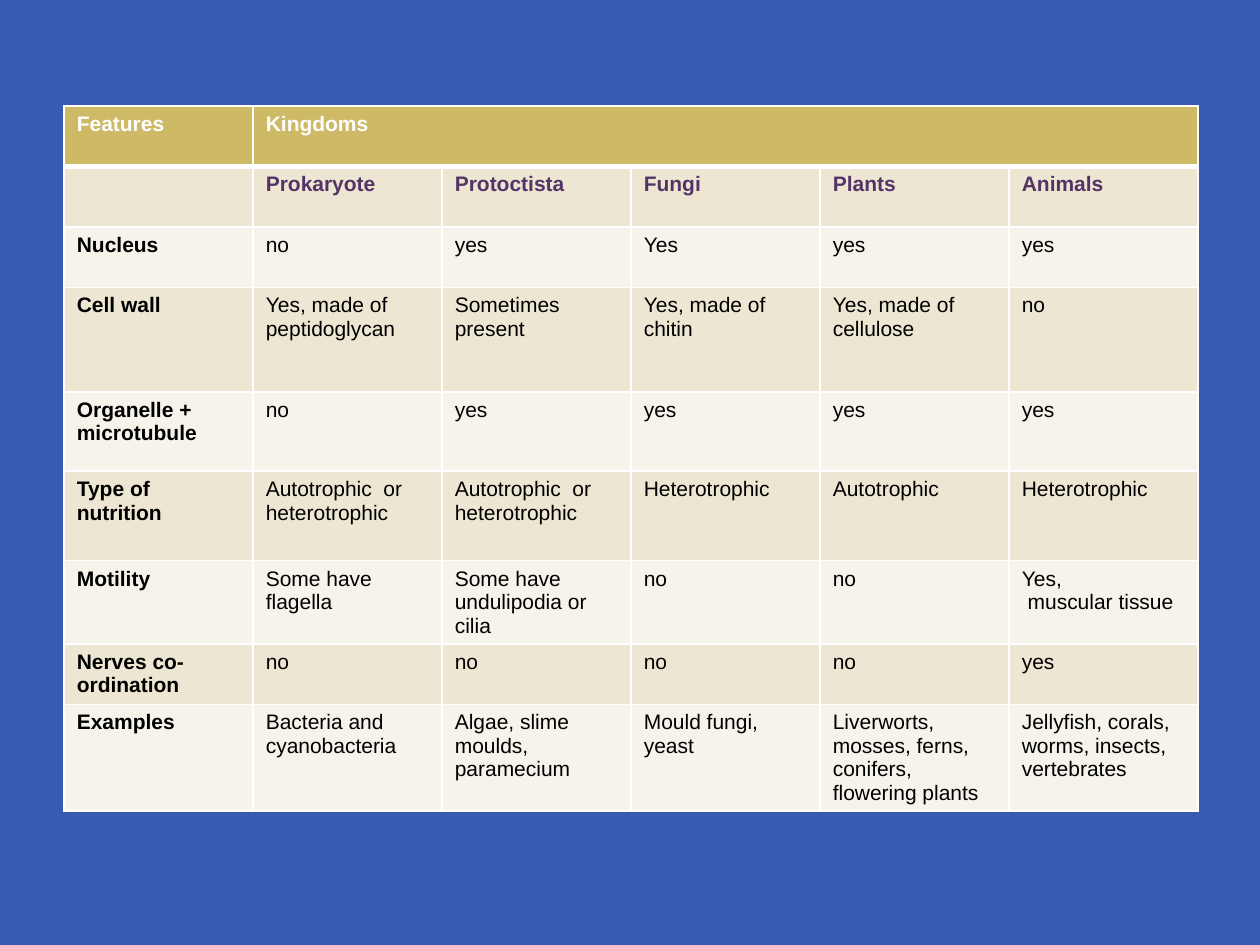
from typing import NamedTuple

from lxml import etree
from pptx import Presentation
from pptx.dml.color import RGBColor
from pptx.oxml.ns import qn
from pptx.util import Inches, Pt

BLUE = RGBColor(0x37, 0x5B, 0xB0)
GOLD = RGBColor(0xCE, 0xB9, 0x66)
SAND = RGBColor(0xED, 0xE6, 0xD3)
CREAM = RGBColor(0xF6, 0xF3, 0xEA)
PURPLE = RGBColor(0x54, 0x34, 0x66)
WHITE = RGBColor(0xFF, 0xFF, 0xFF)
BLACK = RGBColor(0x00, 0x00, 0x00)

FONT_NAME = "Arial"
FONT_SIZE = Pt(12)
THIN, THICK = Pt(1), Pt(3)
COLUMN_COUNT = 6
COLUMN_WIDTH = Inches(1.5)
TABLE_HEIGHT = Inches(5.92)


class FeatureRow(NamedTuple):
    texts: tuple[str, ...]
    height: float = 0.48


class CellStyle(NamedTuple):
    fill: RGBColor
    color: RGBColor
    bold: bool
    top: int = THIN
    bottom: int = THIN


ROWS = [
    FeatureRow(("Features", "Kingdoms", "", "", "", "")),
    FeatureRow(("", "Prokaryote", "Protoctista", "Fungi", "Plants", "Animals")),
    FeatureRow(("Nucleus", "no", "yes", "Yes", "yes", "yes")),
    FeatureRow(("Cell wall", "Yes, made of peptidoglycan", "Sometimes present",
                "Yes, made of chitin", "Yes, made of cellulose", "no"), 0.83),
    FeatureRow(("Organelle +\nmicrotubule", "no", "yes", "yes", "yes", "yes"), 0.63),
    FeatureRow(("Type of nutrition", "Autotrophic  or heterotrophic",
                "Autotrophic  or heterotrophic", "Heterotrophic", "Autotrophic",
                "Heterotrophic"), 0.71),
    FeatureRow(("Motility", "Some have flagella", "Some have undulipodia or cilia",
                "no", "no", "Yes,\n muscular tissue")),
    FeatureRow(("Nerves co-ordination", "no", "no", "no", "no", "yes")),
    FeatureRow(("Examples", "Bacteria and cyanobacteria",
                "Algae, slime moulds, paramecium", "Mould fungi, yeast",
                "Liverworts, mosses, ferns, conifers, flowering plants",
                "Jellyfish, corals, worms, insects, vertebrates")),
]


def style_for(row: int, column: int) -> CellStyle:
    """Header row, kingdom names, then banded rows with bold labels."""
    if row == 0:
        return CellStyle(GOLD, WHITE, True, bottom=THICK)
    if row == 1:
        return CellStyle(SAND, PURPLE, True, top=THICK)
    return CellStyle(SAND if row % 2 else CREAM, BLACK, column == 0)


def add_borders(cell, style: CellStyle) -> None:
    properties = cell._tc.get_or_add_tcPr()
    widths = {"a:lnL": THIN, "a:lnR": THIN, "a:lnT": style.top, "a:lnB": style.bottom}
    for tag, width in widths.items():
        line = etree.SubElement(properties, qn(tag), w=str(int(width)))
        fill = etree.SubElement(line, qn("a:solidFill"))
        etree.SubElement(fill, qn("a:srgbClr"), val=str(WHITE))


def format_cell(cell, text: str, style: CellStyle) -> None:
    add_borders(cell, style)
    cell.fill.solid()
    cell.fill.fore_color.rgb = style.fill
    cell.text = text
    for para in cell.text_frame.paragraphs:
        para.font.name = FONT_NAME
        para.font.size = FONT_SIZE
        para.font.bold = style.bold
        para.font.color.rgb = style.color


def add_kingdom_table(page) -> None:
    frame = page.shapes.add_table(
        len(ROWS), COLUMN_COUNT, Inches(0.51), Inches(0.84),
        COLUMN_WIDTH * COLUMN_COUNT, TABLE_HEIGHT)
    table = frame.table
    table.horz_banding = False
    for row, feature in enumerate(ROWS):
        table.rows[row].height = Inches(feature.height)
        for column, text in enumerate(feature.texts):
            format_cell(table.cell(row, column), text, style_for(row, column))
    # The kingdoms heading spans all the kingdom columns
    table.cell(0, 1).merge(table.cell(0, COLUMN_COUNT - 1))
    frame.height = TABLE_HEIGHT


def main() -> None:
    deck = Presentation()
    deck.slide_width, deck.slide_height = Inches(10), Inches(7.5)
    page = deck.slides.add_slide(deck.slide_layouts[6])

    # Background
    page.background.fill.solid()
    page.background.fill.fore_color.rgb = BLUE

    # Comparison of the five kingdoms
    add_kingdom_table(page)
    deck.save("out.pptx")


if __name__ == "__main__":
    main()
